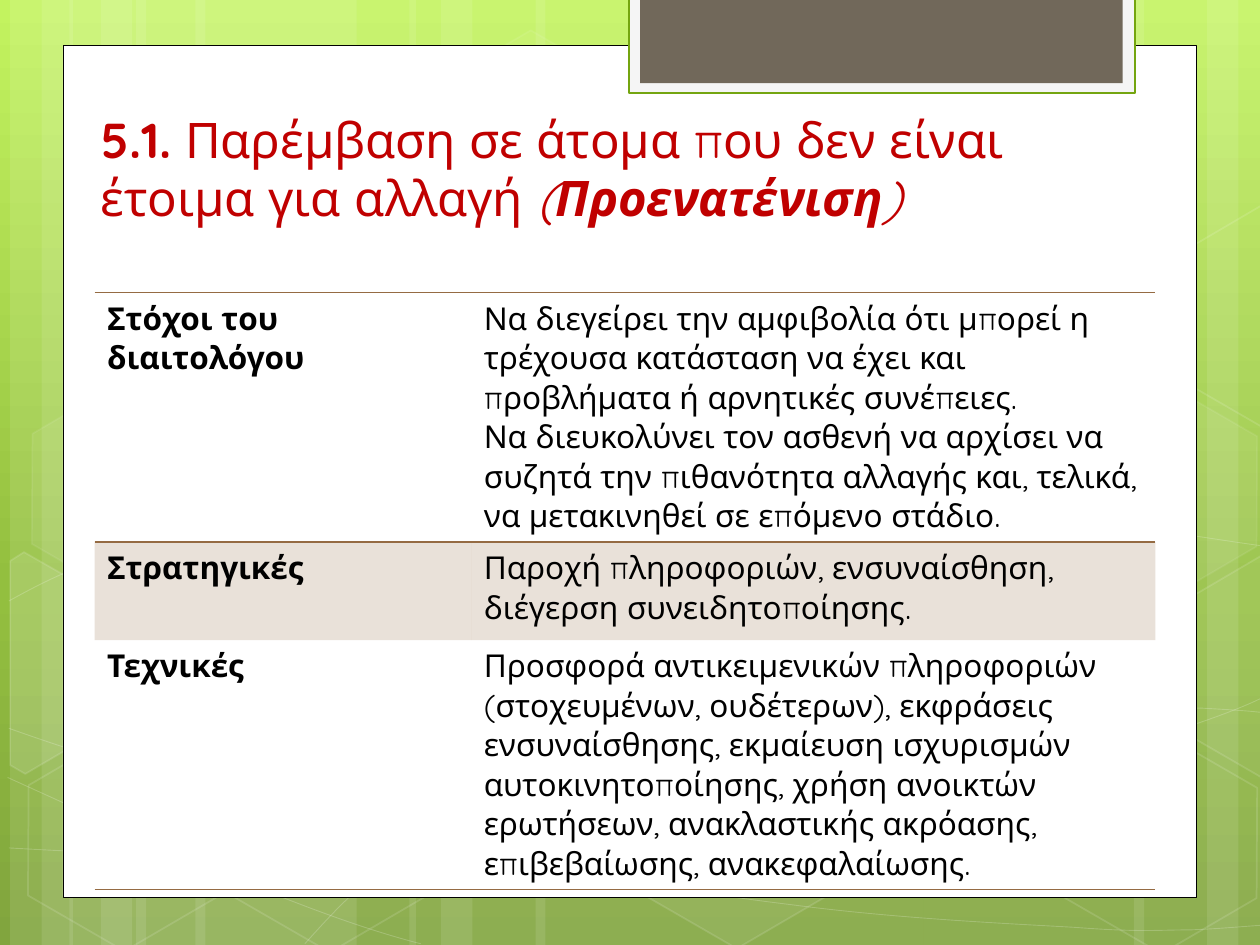
from copy import deepcopy
from dataclasses import dataclass
from math import cos, radians, sin
from typing import NamedTuple, Optional
from lxml.etree import SubElement
from pptx import Presentation
from pptx.dml.color import RGBColor
from pptx.enum.shapes import MSO_SHAPE
from pptx.enum.text import MSO_ANCHOR, PP_ALIGN
from pptx.oxml import parse_xml
from pptx.oxml.ns import nsdecls, qn
from pptx.util import Inches, Pt

@dataclass(frozen=True)
class Theme:
    font: str = "Quicksand"
    title_size: int = 28
    body_size: int = 18
    title: str = "C00000"
    text: str = "000000"
    white: str = "FFFFFF"
    frame: str = "F5F5F5"
    green: str = "74A510"
    tab: str = "71685A"
    brown: str = "956B43"
    gradient: tuple = ((0, "C3F35F"), (0.62, "93BF3F"), (1, "81A53E"))

class Style(NamedTuple):
    fill: Optional[str] = None
    fill_alpha: int = 100
    line: Optional[str] = None
    width: float = 1
    line_alpha: int = 100

class Hexagon(NamedTuple):
    x: float
    y: float
    fill_alpha: int
    line_alpha: int

class CutHexagon(NamedTuple):
    center: tuple
    fill_alpha: int
    points: list

class Run(NamedTuple):
    text: str
    bold: bool = False
    italic: bool = False

class Row(NamedTuple):
    label: str
    paragraphs: tuple
    height: float
    shaded: bool = False

T = Theme()
TILT = 30
BANDS = [(1.08, 1.75), (0.08, 0.5), (0.33, 0.83), (1.55, 1.75), (0.55, 0.5), (0.8, 0.83),
         (7.33, 1.75), (9.58, 0.5), (9, 0.83), (4.25, 3.08), (3.25, 0.5), (3.5, 0.83)]
WAVES = [
    [(0.07, 6.73), (0.61, 6.76), (1.15, 6.79), (1.9, 6.78), (2.65, 6.77), (3.58, 6.75), (4.58, 6.65),
     (5.58, 6.55), (7, 6.36), (7.92, 6.17), (8.83, 5.98), (9.77, 5.68), (10.07, 5.51)],
    [(0.07, 4.77), (0.36, 4.61), (0.65, 4.46), (1.21, 4.31), (1.78, 4.16), (2.59, 3.94), (3.47, 3.87),
     (4.36, 3.8), (5.44, 3.79), (6.54, 3.87), (7.64, 3.95), (9.47, 4.26), (10.07, 4.34)],
    [(0.06, 6.17), (1.27, 6.72), (2.47, 7.27), (3.34, 7.49)],
    [(0.07, 5.78), (0.38, 5.89), (0.7, 6), (1.28, 6.16), (1.86, 6.31), (2.73, 6.56), (3.57, 6.73),
     (4.4, 6.9), (5.45, 7.08), (6.28, 7.18), (7.11, 7.29), (8, 7.33), (8.53, 7.36), (9.05, 7.4),
     (9.19, 7.38), (9.45, 7.38), (9.71, 7.37), (9.89, 7.35), (10.07, 7.34)],
    [(2.42, 7.49), (2.6, 7.29), (2.78, 7.09), (3.02, 6.91), (3.26, 6.73), (3.6, 6.53), (3.88, 6.39),
     (4.16, 6.25), (4.33, 6.19), (4.7, 6.09), (5.06, 5.99), (5.73, 5.85), (6.08, 5.78), (6.44, 5.71),
     (6.49, 5.71), (6.8, 5.69), (7.11, 5.66), (7.6, 5.63), (7.94, 5.62), (8.29, 5.61), (8.86, 5.62),
     (8.86, 5.62), (9.08, 5.62), (9.31, 5.62), (9.53, 5.62), (9.71, 5.63), (9.88, 5.64), (9.97, 5.65),
     (10.06, 5.66), (10.03, 5.65), (10.06, 5.66)],
]
HEXAGONS = [Hexagon(3.34, 0.36, 4, 8), Hexagon(4.97, 5.89, 6, 12), Hexagon(0.11, 5.91, 0, 12),
            Hexagon(0.14, 3.12, 7, 8), Hexagon(1.74, 5.92, 0, 12), Hexagon(7.53, 4.53, 10, 12),
            Hexagon(8.34, 5.93, 0, 12), Hexagon(8.34, 3.14, 7, 8)]
CUT_HEXAGONS = [
    CutHexagon((0.36, 5.35), 10, [(0.08, 4.45), (0.19, 4.38), (0.96, 4.82), (0.95, 5.7), (0.2, 6.14), (0.08, 6.07)]),
    CutHexagon((9.85, 5.2), 4, [(9.26, 4.85), (10.01, 4.41), (10.09, 4.46), (10.09, 6.13), (10.02, 6.17), (9.26, 5.73)]),
    CutHexagon((9.85, 2.41), 0, [(9.26, 2.07), (10.01, 1.63), (10.1, 1.68), (10.09, 3.35), (10.02, 3.39), (9.26, 2.95)]),
]
TITLE = [Run("5.1. ", True), Run("Παρέμβαση σε άτομα που δεν είναι έτοιμα για αλλαγή "),
         Run("(", italic=True), Run("Προενατένιση", True, True), Run(")", italic=True)]
ROWS = [
    Row("Στόχοι του διαιτολόγου",
        ("Να διεγείρει την αμφιβολία ότι μπορεί η τρέχουσα κατάσταση να έχει και προβλήματα ή αρνητικές συνέπειες.",
         "Να διευκολύνει τον ασθενή να αρχίσει να συζητά την πιθανότητα αλλαγής και, τελικά, "
         "να μετακινηθεί σε επόμενο στάδιο."), 1.98),
    Row("Στρατηγικές", ("Παροχή πληροφοριών, ενσυναίσθηση, διέγερση συνειδητοποίησης.",), 0.78, True),
    Row("Τεχνικές",
        ("Προσφορά αντικειμενικών πληροφοριών (στοχευμένων, ουδέτερων), εκφράσεις ενσυναίσθησης, εκμαίευση "
         "ισχυρισμών αυτοκινητοποίησης, χρήση ανοικτών ερωτήσεων, ανακλαστικής ακρόασης, επιβεβαίωσης, "
         "ανακεφαλαίωσης.",), 1.98),
]

def paint(fill, holder, color: str, alpha: int = 100) -> None:
    fill.solid()
    fill.fore_color.rgb = RGBColor.from_string(color)
    if alpha < 100:
        clr = holder.find(qn("a:solidFill")).find(qn("a:srgbClr"))
        SubElement(clr, qn("a:alpha")).set("val", str(alpha * 1000))

def apply_style(sp, style: Style) -> None:
    sp.shadow.inherit = False
    props = sp.element.spPr
    if style.fill and style.fill_alpha:
        paint(sp.fill, props, style.fill, style.fill_alpha)
    else:
        sp.fill.background()
    if style.line:
        sp.line.width = Pt(style.width)
        paint(sp.line.fill, props.find(qn("a:ln")), style.line, style.line_alpha)
    else:
        sp.line.fill.background()

def add_box(s, kind, x: float, y: float, w: float, h: float, style: Style):
    sp = s.shapes.add_shape(kind, Inches(x), Inches(y), Inches(w), Inches(h))
    apply_style(sp, style)
    return sp

def add_outline(s, points: list, closed: bool, style: Style):
    start, *rest = [(Inches(x), Inches(y)) for x, y in points]
    builder = s.shapes.build_freeform(*start)
    builder.add_line_segments(rest, close=closed)
    sp = builder.convert_to_shape()
    apply_style(sp, style)
    return sp

def add_wave(s, knots: list) -> None:
    sp = add_outline(s, knots, False, Style(line=T.white, width=0.5, line_alpha=20))
    outline = sp.element.find(".//" + qn("a:path"))
    lines = outline.findall(qn("a:lnTo"))
    for i in range(0, len(lines), 3):
        curve = SubElement(outline, qn("a:cubicBezTo"))
        for line in lines[i:i + 3]:
            curve.append(line[0])
            outline.remove(line)

def add_cut_hexagon(s, h: CutHexagon) -> None:
    (cx, cy), c, d = h.center, cos(radians(TILT)), sin(radians(TILT))
    level = [(cx + (x - cx) * c + (y - cy) * d, cy - (x - cx) * d + (y - cy) * c) for x, y in h.points]
    add_outline(s, level, True, Style(T.white, h.fill_alpha, T.white, 1, 12)).rotation = TILT

def add_run(p, run: Run, size: int, color: str) -> None:
    r = p.add_run()
    r.text = run.text
    r.font.name, r.font.size, r.font.bold, r.font.italic = T.font, Pt(size), run.bold, run.italic
    r.font.color.rgb = RGBColor.from_string(color)

def add_backdrop(s) -> None:
    fill = s.background.fill
    fill.gradient()
    fill.gradient_angle = 270
    stops = s.element.find(".//" + qn("a:gsLst"))
    stops.append(deepcopy(stops[-1]))
    for stop, (position, color) in zip(fill.gradient_stops, T.gradient):
        stop.position = position
        stop.color.rgb = RGBColor.from_string(color)
    for x, w in BANDS:
        add_box(s, MSO_SHAPE.RECTANGLE, x, 0, w, 7.5, Style(T.white, 10))
    for knots in WAVES:
        add_wave(s, knots)
    for h in HEXAGONS:
        sp = add_box(s, MSO_SHAPE.HEXAGON, h.x, h.y, 1.75, 1.52, Style(T.white, h.fill_alpha, T.white, 1, h.line_alpha))
        sp.adjustments[0] = 0.285
        sp.rotation = TILT
    for h in CUT_HEXAGONS:
        add_cut_hexagon(s, h)
    add_box(s, MSO_SHAPE.RECTANGLE, 0.5, 0.36, 9, 6.76, Style(T.white, line=T.text, width=0.5))
    add_box(s, MSO_SHAPE.RECTANGLE, 4.99, -0.02, 4.02, 0.76, Style(T.frame, line=T.green, width=1.25))
    add_box(s, MSO_SHAPE.RECTANGLE, 5.08, -0.02, 3.83, 0.68, Style(T.tab))

def add_title(s) -> None:
    sp = s.shapes.title
    s.shapes.element.append(sp.element)
    sp.left, sp.top, sp.width, sp.height = map(Inches, (0.7, 0.6, 7.68, 1.25))
    tf = sp.text_frame
    tf.word_wrap = True
    tf.vertical_anchor = MSO_ANCHOR.BOTTOM
    p = tf.paragraphs[0]
    p.alignment = PP_ALIGN.LEFT
    for run in TITLE:
        add_run(p, run, T.title_size, T.title)

def add_border(cell, side: str) -> None:
    ln = parse_xml(f'<a:{side} {nsdecls("a")} w="12700"><a:solidFill><a:srgbClr val="{T.brown}"/></a:solidFill></a:{side}>')
    cell._tc.get_or_add_tcPr().insert(0, ln)

def add_stage_table(s) -> None:
    frame = s.shapes.add_table(len(ROWS), 2, Inches(0.75), Inches(2.32), Inches(8.42), Inches(4.74))
    table = frame.table
    table.first_row = table.horz_banding = False
    frame.element.find(".//" + qn("a:tableStyleId")).text = "{2D5ABB26-0587-4C30-8999-92F81FD0307C}"
    table.columns[0].width, table.columns[1].width = Inches(2.99), Inches(5.43)
    for i, row in enumerate(ROWS):
        table.rows[i].height = Inches(row.height)
        for cell, texts in zip(table.rows[i].cells, ((row.label,), row.paragraphs)):
            if row.shaded:
                paint(cell.fill, cell._tc.get_or_add_tcPr(), T.brown, 20)
            else:
                cell.fill.background()
                add_border(cell, "lnB")
            if i == 0:
                add_border(cell, "lnT")
            for n, text in enumerate(texts):
                p = cell.text_frame.add_paragraph() if n else cell.text_frame.paragraphs[0]
                add_run(p, Run(text, text == row.label), T.body_size, T.text)

def main() -> None:
    prs = Presentation()
    prs.slide_width, prs.slide_height = Inches(10), Inches(7.5)
    s = prs.slides.add_slide(prs.slide_layouts[5])
    add_backdrop(s)
    add_title(s)
    add_stage_table(s)
    prs.save("out.pptx")

if __name__ == "__main__":
    main()
